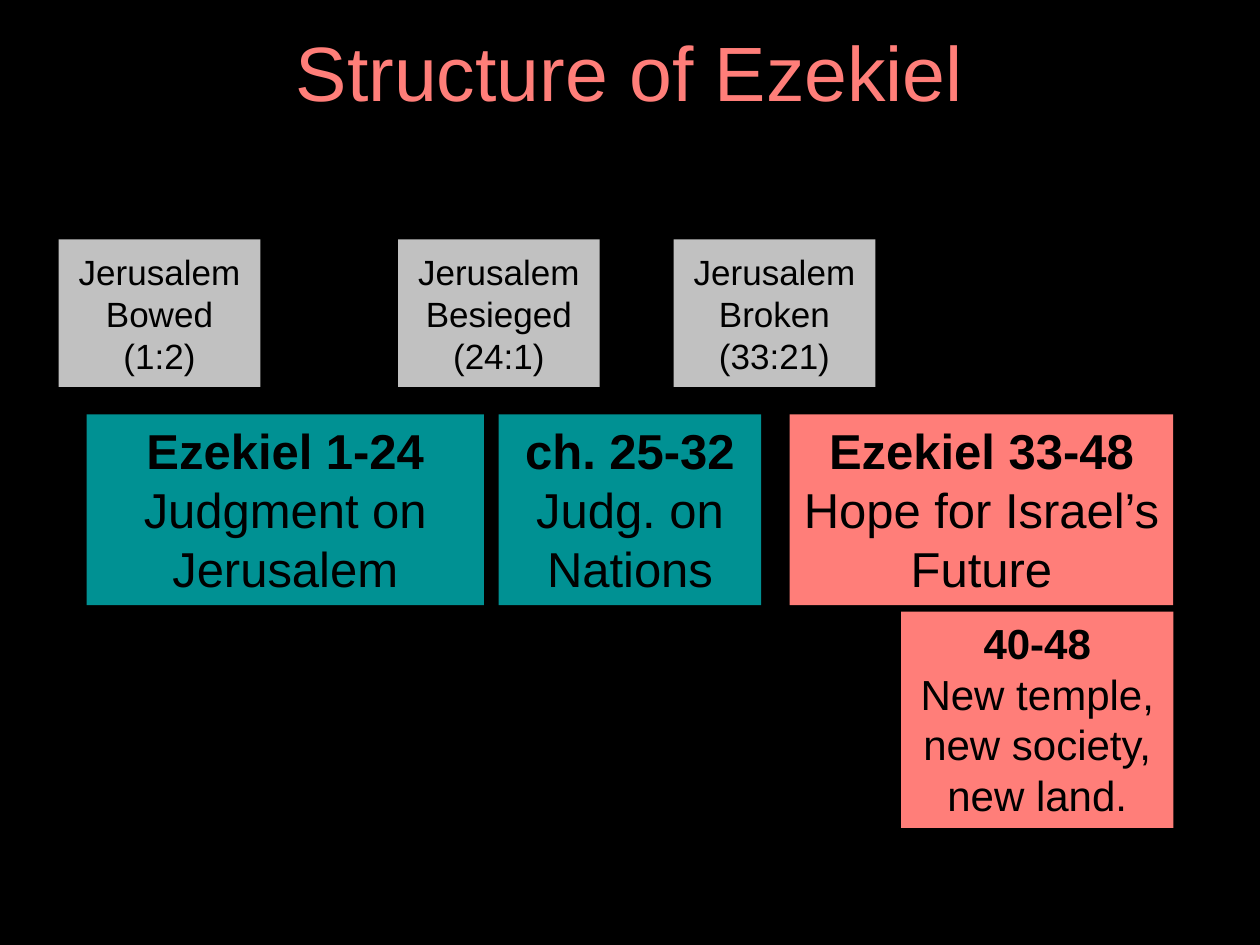
from pptx import Presentation
from pptx import util as u
from pptx.dml.color import RGBColor
from pptx.enum import shapes, text

BLACK = RGBColor(0x00, 0x00, 0x00)
CORAL = RGBColor(0xFF, 0x7E, 0x79)
TEAL = RGBColor(0x00, 0x91, 0x93)
GRAY = RGBColor(0xC1, 0xC1, 0xC1)


def write_lines(shape, lines, size, color, bold_first=False):
    frame = shape.text_frame
    frame.word_wrap = True
    frame.text = "\n".join(lines)
    for index, paragraph in enumerate(frame.paragraphs):
        paragraph.alignment = text.PP_ALIGN.CENTER
        paragraph.font.name = "Arial"
        paragraph.font.size = u.Pt(size)
        paragraph.font.color.rgb = color
        paragraph.font.bold = bold_first and index == 0
    return frame


def add_box(left, top, width, height, fill, lines, size, heading):
    box = slide.shapes.add_shape(shapes.MSO_SHAPE.RECTANGLE, u.Pt(left), u.Pt(top),
                                 u.Pt(width), u.Pt(height))
    box.shadow.inherit = False
    box.fill.solid()
    box.fill.fore_color.rgb = fill
    box.line.fill.background()
    frame = write_lines(box, lines, size, BLACK, bold_first=heading)
    if heading:
        frame.vertical_anchor = text.MSO_ANCHOR.TOP
        frame.auto_size = text.MSO_AUTO_SIZE.SHAPE_TO_FIT_TEXT
    else:
        frame.vertical_anchor = text.MSO_ANCHOR.MIDDLE


presentation = Presentation()
presentation.slide_width = u.Pt(720)
presentation.slide_height = u.Pt(540)
slide = presentation.slides.add_slide(presentation.slide_layouts[6])
slide.background.fill.solid()
slide.background.fill.fore_color.rgb = BLACK

# Title
title = slide.shapes.add_textbox(u.Pt(49.5), u.Pt(11.5), u.Pt(621), u.Pt(65))
title_frame = write_lines(title, ["Structure of Ezekiel"], 44, CORAL)
title_frame.vertical_anchor = text.MSO_ANCHOR.MIDDLE
title_frame.paragraphs[0].line_spacing = 0.9

# Sections of the book
sections = [
    (49.5, 227, TEAL, ["Ezekiel 1-24", "Judgment on Jerusalem"]),
    (285, 150, TEAL, ["ch. 25-32", "Judg. on Nations"]),
    (451.2, 219.3, CORAL, ["Ezekiel 33-48", "Hope for Israel’s Future"]),
]
for left, width, fill, lines in sections:
    add_box(left, 236.8, width, 109, fill, lines, 28, heading=True)

# Events in Jerusalem
events = [
    (33.6, "Bowed", "(1:2)"),
    (227.5, "Besieged", "(24:1)"),
    (385, "Broken", "(33:21)"),
]
for left, event, verse in events:
    add_box(left, 136.8, 115.2, 84.3, GRAY, [f"Jerusalem {event}", verse], 20,
            heading=False)

# Closing vision
add_box(514.9, 349.5, 155.6, 123.6, CORAL,
        ["40-48", "New temple, new society,", "new land."], 24, heading=True)

presentation.save("out.pptx")
